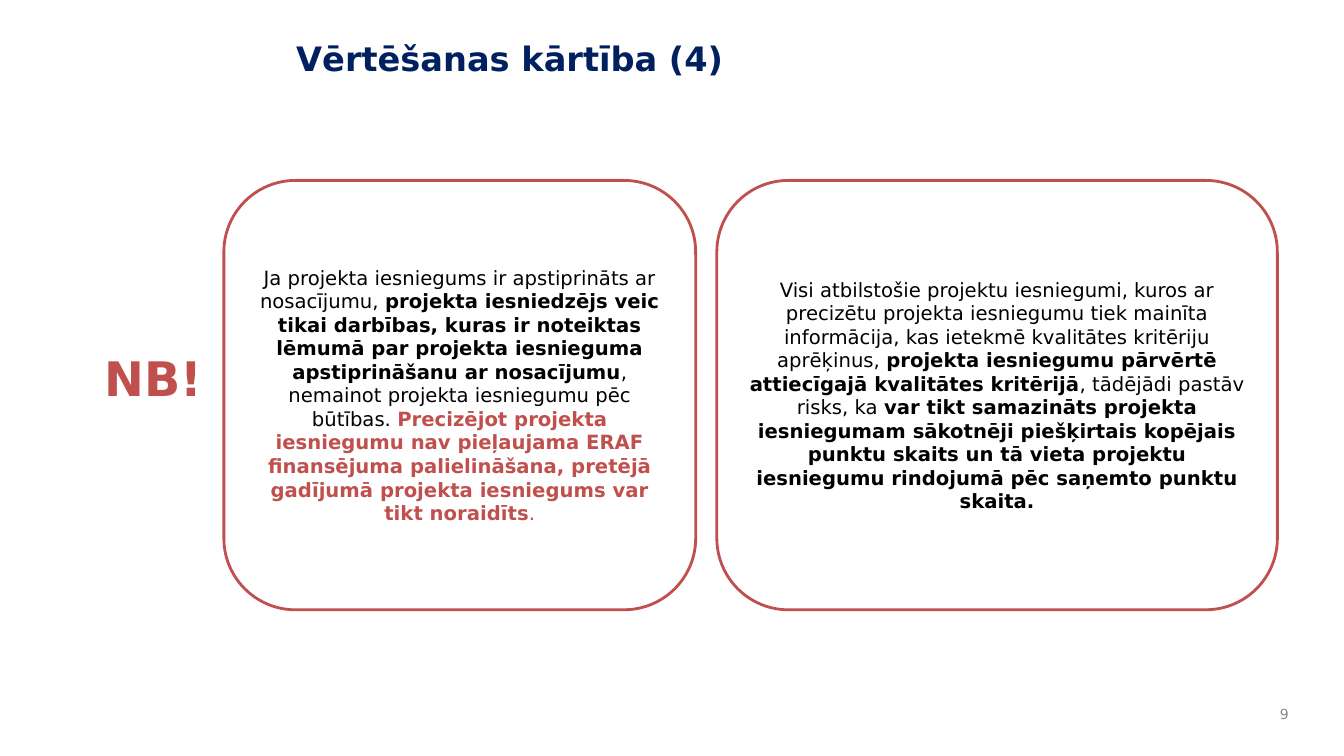
from pptx import Presentation
from pptx.dml.color import RGBColor
from pptx.enum.shapes import MSO_SHAPE
from pptx.enum.text import MSO_ANCHOR, PP_ALIGN
from pptx.util import Inches, Pt

NAVY = RGBColor(0x00, 0x20, 0x60)
RED = RGBColor(0xC0, 0x50, 0x4D)
GREY = RGBColor(0x89, 0x89, 0x89)
BLACK = RGBColor(0, 0, 0)
WHITE = RGBColor(255, 255, 255)
FONT = "DejaVu Sans"
LEFT, CENTER, RIGHT = PP_ALIGN.LEFT, PP_ALIGN.CENTER, PP_ALIGN.RIGHT
TOP, MIDDLE = MSO_ANCHOR.TOP, MSO_ANCHOR.MIDDLE

# Content: runs are (text, colour, bold)
LABELS = [
    # box (left, top, width, height), run, size, alignment, anchor
    ((2.84, 0.33, 9.83, 1.17), ("Vērtēšanas kārtība (4)", NAVY, True), 24, LEFT, TOP),
    ((12.44, 6.92, 0.44, 0.33), ("9", GREY, False), 10, RIGHT, MIDDLE),
    ((0.94, 3.41, 1.63, 0.67), ("NB!", RED, True), 34, LEFT, TOP),
]
CARDS = [
    # width, runs
    (4.68, [
        ("Ja projekta iesniegums ir apstiprināts ar nosacījumu, ", BLACK, False),
        ("projekta iesniedzējs veic tikai darbības, kuras ir noteiktas lēmumā par "
         "projekta iesnieguma apstiprināšanu ar nosacījumu", BLACK, True),
        (", nemainot projekta iesniegumu pēc būtības. ", BLACK, False),
        ("Precizējot projekta iesniegumu nav pieļaujama ERAF finansējuma palielināšana, "
         "pretējā gadījumā projekta iesniegums var tikt noraidīts", RED, True),
        (".", RED, False),
    ]),
    (5.56, [
        ("Visi atbilstošie projektu iesniegumi, kuros ar precizētu projekta iesniegumu "
         "tiek mainīta informācija, kas ietekmē kvalitātes kritēriju aprēķinus, ", BLACK, False),
        ("projekta iesniegumu pārvērtē attiecīgajā kvalitātes kritērijā", BLACK, True),
        (", tādējādi pastāv risks, ka ", BLACK, False),
        ("var tikt samazināts projekta iesniegumam sākotnēji piešķirtais kopējais punktu "
         "skaits un tā vieta projektu iesniegumu rindojumā pēc saņemto punktu skaita.",
         BLACK, True),
    ]),
]
CARD_LEFT, CARD_TOP, CARD_HEIGHT, CARD_GAP = 2.22, 1.79, 4.26, 0.21


def write(shape, runs, size, alignment, anchor):
    frame = shape.text_frame
    frame.word_wrap = True
    frame.vertical_anchor = anchor
    paragraph = frame.paragraphs[0]
    paragraph.alignment = alignment
    for text, colour, bold in runs:
        run = paragraph.add_run()
        run.text = text
        for name, value in {"name": FONT, "size": Pt(size), "bold": bold}.items():
            setattr(run.font, name, value)
        run.font.color.rgb = colour


presentation = Presentation()
presentation.slide_width, presentation.slide_height = Inches(13.33), Inches(7.5)
slide = presentation.slides.add_slide(presentation.slide_layouts[6])

# Title, page number and warning label
for box, run, size, alignment, anchor in LABELS:
    label = slide.shapes.add_textbox(*map(Inches, box))
    write(label, [run], size, alignment, anchor)

# Rounded cards, side by side
left = CARD_LEFT
for width, runs in CARDS:
    card = slide.shapes.add_shape(
        MSO_SHAPE.ROUNDED_RECTANGLE,
        *map(Inches, (left, CARD_TOP, width, CARD_HEIGHT)))
    card.shadow.inherit = False
    card.fill.solid()
    card.fill.fore_color.rgb = WHITE
    card.line.color.rgb = RED
    card.line.width = Pt(2)
    write(card, runs, 14, CENTER, MIDDLE)
    left += width + CARD_GAP

presentation.save("out.pptx")
